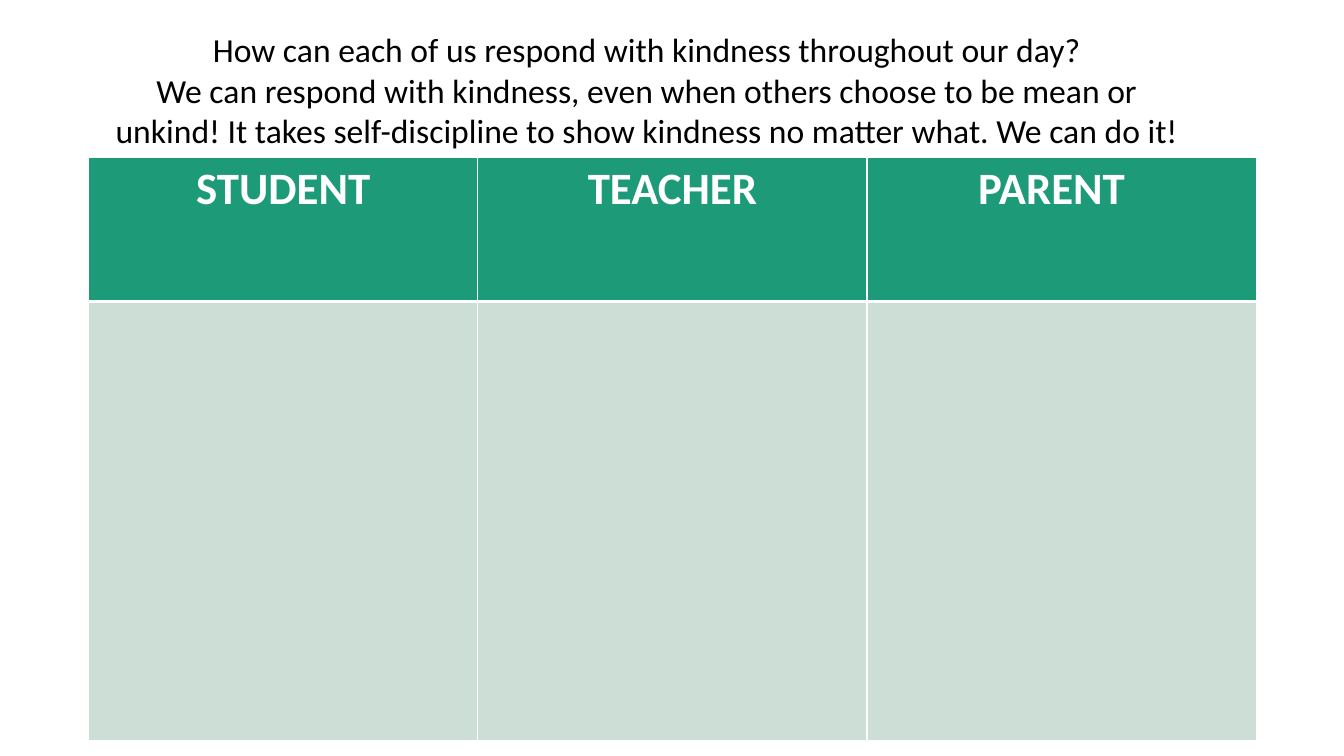
from lxml.etree import SubElement
from pptx import Presentation
from pptx.dml.color import RGBColor
from pptx.enum.text import MSO_AUTO_SIZE, PP_ALIGN
from pptx.oxml.ns import qn
from pptx.util import Inches, Pt

BLACK = RGBColor(0x00, 0x00, 0x00)
WHITE = RGBColor(0xFF, 0xFF, 0xFF)
GREEN = RGBColor(0x1D, 0x9A, 0x78)
PALE_GREEN = RGBColor(0xCD, 0xDE, 0xD6)

INTRO = [
    "How can each of us respond with kindness throughout our day?",
    "We can respond with kindness, even when others choose to be mean or",
    "unkind! It takes self-discipline to show kindness no matter what. We can do it!",
]
ROLES = ["STUDENT", "TEACHER", "PARENT"]
COLUMN_WIDTH = 3.86
HEADER_HEIGHT, BODY_HEIGHT = 1.43, 4.36
INTRO_FONT = {"name": "Calibri", "size": Pt(24), "bold": False}
ROLE_FONT = {"name": "Calibri", "size": Pt(32), "bold": True}


def write_line(p, text, font, color):
    p.alignment = PP_ALIGN.CENTER
    r = p.add_run()
    r.text = text
    for name, value in font.items():
        setattr(r.font, name, value)
    r.font.color.rgb = color


def add_intro(s):
    sp = s.shapes.add_textbox(Inches(0.15), Inches(0.24), Inches(12.53), Inches(1.31))
    tf = sp.text_frame
    tf.word_wrap = True
    tf.auto_size = MSO_AUTO_SIZE.SHAPE_TO_FIT_TEXT
    for i, line in enumerate(INTRO):
        p = tf.add_paragraph() if i else tf.paragraphs[0]
        write_line(p, line, INTRO_FONT, BLACK)


def style_cell(cell, fill, borders):
    tcPr = cell._tc.get_or_add_tcPr()
    for side, width in borders.items():
        ln = SubElement(tcPr, qn(f"a:ln{side}"), w=str(Pt(width)))
        SubElement(SubElement(ln, qn("a:solidFill")), qn("a:srgbClr"), val=str(WHITE))
    cell.fill.solid()
    cell.fill.fore_color.rgb = fill


def add_role_table(s):
    frame = s.shapes.add_table(
        2, len(ROLES), Inches(0.88), Inches(1.56),
        Inches(COLUMN_WIDTH * len(ROLES)), Inches(HEADER_HEIGHT + BODY_HEIGHT))
    table = frame.table
    table.rows[0].height = Inches(HEADER_HEIGHT)
    table.rows[1].height = Inches(BODY_HEIGHT)
    for i, role in enumerate(ROLES):
        table.columns[i].width = Inches(COLUMN_WIDTH)
        header, body = table.cell(0, i), table.cell(1, i)
        style_cell(header, GREEN, {"L": 1, "R": 1, "T": 1, "B": 3})
        style_cell(body, PALE_GREEN, {"L": 1, "R": 1, "T": 3, "B": 1})
        write_line(header.text_frame.paragraphs[0], role, ROLE_FONT, WHITE)
    table.cell(0, len(ROLES) - 1).margin_right = Inches(0.3)


def main():
    prs = Presentation()
    prs.slide_width, prs.slide_height = Inches(13.33), Inches(7.5)
    s = prs.slides.add_slide(prs.slide_layouts[6])
    add_role_table(s)
    add_intro(s)
    prs.save("out.pptx")


if __name__ == "__main__":
    main()
